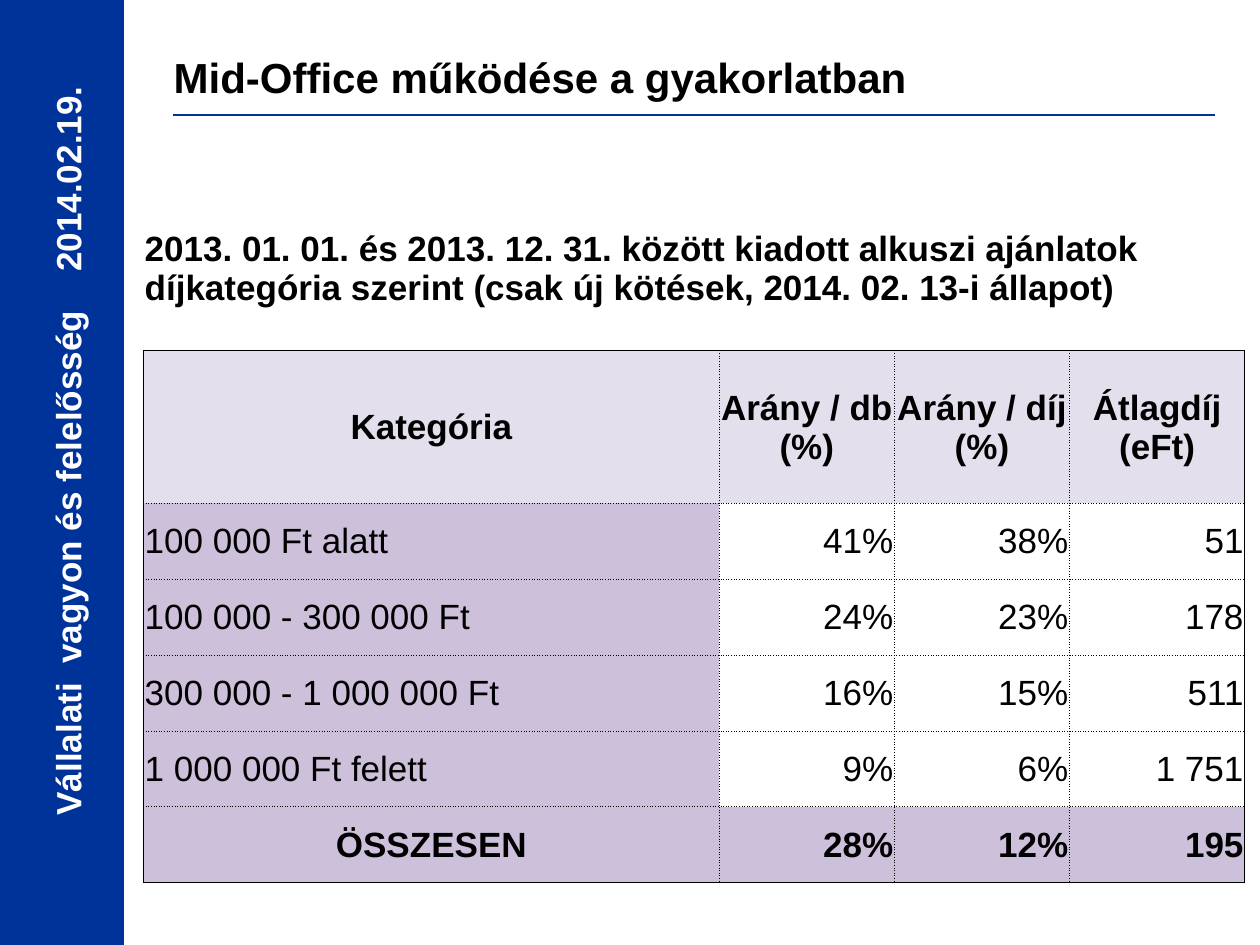
from dataclasses import dataclass

from lxml.etree import SubElement
from pptx import Presentation
from pptx.dml.color import RGBColor
from pptx.enum.shapes import MSO_CONNECTOR, MSO_SHAPE
from pptx.enum.text import MSO_ANCHOR, MSO_AUTO_SIZE, PP_ALIGN
from pptx.oxml.ns import qn
from pptx.util import Pt


@dataclass(frozen=True)
class Theme:
    font: str = "Arial"
    title_size: float = 24
    body_size: float = 20
    navy: str = "003399"
    ink: str = "000000"
    paper: str = "FFFFFF"
    header_fill: str = "E4DFEC"
    label_fill: str = "CCC0DA"
    rule_width: float = 1.5
    border_width: float = 0.5


@dataclass(frozen=True)
class CategoryRow:
    texts: tuple[str, ...]
    height: float = 43.4
    aligns: tuple = (PP_ALIGN.LEFT,) + (PP_ALIGN.RIGHT,) * 3
    label_fill: str | None = None
    value_fill: str | None = None
    bold: bool = False


THEME = Theme()
CENTER, RIGHT = PP_ALIGN.CENTER, PP_ALIGN.RIGHT
COLUMN_WIDTHS = (329, 100.1, 100.1, 100.1)
CAPTION_HEIGHT = 72.5
CAPTION = ("2013. 01. 01. és 2013. 12. 31. között kiadott alkuszi ajánlatok "
           "díjkategória szerint (csak új kötések, 2014. 02. 13-i állapot)")

HEADER = CategoryRow(("Kategória", "Arány / db\v(%)", "Arány / díj\v(%)", "Átlagdíj\v(eFt)"),
                     87, (CENTER,) * 4, THEME.header_fill, THEME.header_fill, True)
CATEGORIES = [
    CategoryRow(texts, label_fill=THEME.label_fill) for texts in (
        ("100 000 Ft alatt", "41%", "38%", "51"),
        ("100 000 - 300 000 Ft", "24%", "23%", "178"),
        ("300 000 - 1 000 000 Ft", "16%", "15%", "511"),
        ("1 000 000 Ft felett", "9%", "6%", "1 751"),
    )
]
TOTAL = CategoryRow(("ÖSSZESEN", "28%", "12%", "195"), aligns=(CENTER,) + (RIGHT,) * 3,
                    label_fill=THEME.label_fill, value_fill=THEME.label_fill, bold=True)
ROWS = [HEADER, *CATEGORIES, TOTAL]


def write(frame, text: str, size: float, color: str, bold: bool, align=PP_ALIGN.LEFT) -> None:
    paragraph = frame.paragraphs[0]
    paragraph.text = text
    paragraph.alignment = align
    font = paragraph.font
    font.name, font.size, font.bold = THEME.font, Pt(size), bold
    font.color.rgb = RGBColor.from_string(color)


def set_borders(cell, left: str | None, right: str | None,
                top: str | None, bottom: str | None) -> None:
    """Each side is a preset dash name, or None for no line."""
    properties = cell._tc.get_or_add_tcPr()
    for tag, dash in zip(("a:lnL", "a:lnR", "a:lnT", "a:lnB"), (left, right, top, bottom)):
        line = SubElement(properties, qn(tag), w=str(Pt(THEME.border_width)))
        if dash is None:
            SubElement(line, qn("a:noFill"))
            continue
        fill = SubElement(line, qn("a:solidFill"))
        SubElement(fill, qn("a:srgbClr"), val=THEME.ink)
        SubElement(line, qn("a:prstDash"), val=dash)


def fill_cell(cell, text: str, fill: str | None, bold: bool, align=PP_ALIGN.LEFT) -> None:
    cell.margin_left = cell.margin_right = cell.margin_top = Pt(0.7)
    cell.margin_bottom = Pt(0)
    cell.vertical_anchor = MSO_ANCHOR.MIDDLE
    write(cell.text_frame, text, THEME.body_size, THEME.ink, bold, align)
    if fill:
        cell.fill.solid()
        cell.fill.fore_color.rgb = RGBColor.from_string(fill)
    else:
        cell.fill.background()


def draw_sidebar(slide) -> None:
    band = slide.shapes.add_shape(MSO_SHAPE.RECTANGLE, Pt(0), Pt(0), Pt(70.8), Pt(540))
    band.shadow.inherit = False
    band.fill.solid()
    band.fill.fore_color.rgb = RGBColor.from_string(THEME.navy)
    band.line.fill.background()

    topic = slide.shapes.add_textbox(Pt(-210), Pt(242), Pt(497), Pt(31.5))
    topic.rotation = 270
    frame = topic.text_frame
    frame.word_wrap = True
    frame.auto_size = MSO_AUTO_SIZE.SHAPE_TO_FIT_TEXT
    frame.vertical_anchor = MSO_ANCHOR.MIDDLE
    write(frame, "Vállalati  vagyon és felelősség    2014.02.19.",
          THEME.body_size, THEME.paper, True, CENTER)


def draw_title(slide) -> None:
    rule = slide.shapes.add_connector(MSO_CONNECTOR.STRAIGHT, Pt(99), Pt(65.7), Pt(694.5), Pt(65.7))
    rule.line.color.rgb = RGBColor.from_string(THEME.navy)
    rule.line.width = Pt(THEME.rule_width)
    SubElement(rule._element.spPr, qn("a:effectLst"))

    title = slide.shapes.add_textbox(Pt(92.2), Pt(26), Pt(534), Pt(57))
    title.text_frame.word_wrap = True
    write(title.text_frame, "Mid-Office működése a gyakorlatban",
          THEME.title_size, THEME.ink, True)


def draw_offer_table(slide) -> None:
    heights = [CAPTION_HEIGHT] + [row.height for row in ROWS]
    offers = slide.shapes.add_table(len(heights), len(COLUMN_WIDTHS), Pt(82), Pt(128),
                                    Pt(sum(COLUMN_WIDTHS)), Pt(sum(heights))).table
    offers.first_row = offers.horz_banding = False
    for column, width in zip(offers.columns, COLUMN_WIDTHS):
        column.width = Pt(width)
    for table_row, height in zip(offers.rows, heights):
        table_row.height = Pt(height)

    # Caption across all columns, raised above the grid
    last_column = len(COLUMN_WIDTHS) - 1
    for column in range(last_column + 1):
        set_borders(offers.cell(0, column), None, None, None, "solid")
    caption = offers.cell(0, 0)
    caption.merge(offers.cell(0, last_column))
    fill_cell(caption, CAPTION, None, True)
    caption.margin_bottom = Pt(22)

    # Grid: solid outline, dotted inside
    for r, row in enumerate(ROWS, start=1):
        for c, (text, align) in enumerate(zip(row.texts, row.aligns)):
            cell = offers.cell(r, c)
            on_edge = (c == 0, c == last_column, r == 1, r == len(ROWS))
            set_borders(cell, *("solid" if edge else "sysDot" for edge in on_edge))
            fill_cell(cell, text, row.value_fill if c else row.label_fill, row.bold, align)


def main() -> None:
    presentation = Presentation()
    presentation.slide_width, presentation.slide_height = Pt(720), Pt(540)
    slide = presentation.slides.add_slide(presentation.slide_layouts[6])
    draw_sidebar(slide)
    draw_title(slide)
    draw_offer_table(slide)
    presentation.save("out.pptx")


if __name__ == "__main__":
    main()
